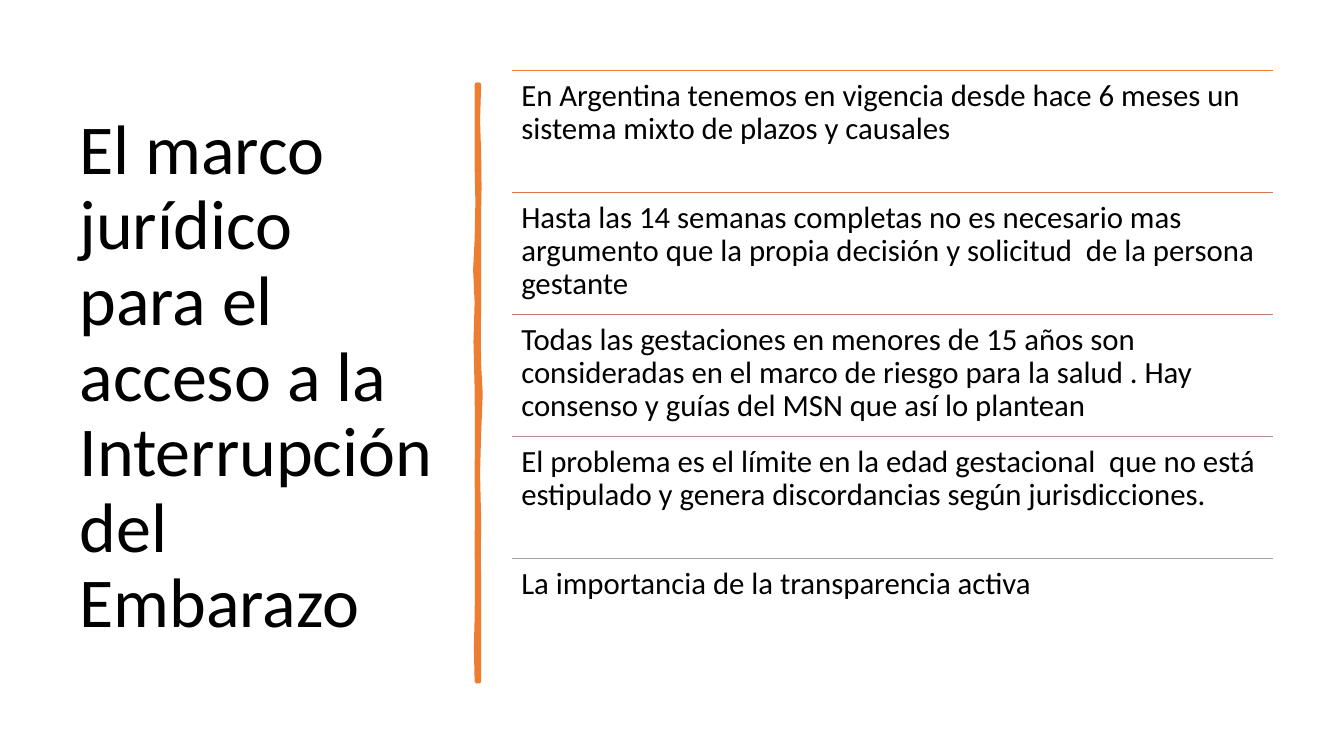
"""Build the slide on the legal framework with its divider and five ruled points."""
from dataclasses import dataclass

from lxml import etree
from pptx import Presentation, util as u
from pptx.dml.color import RGBColor
from pptx.enum import shapes as sh, text as tx
from pptx.oxml import ns

FONT = "Calibri"
BLACK = "000000"
ORANGE = "ED7D31"
LEFT, TOP, WIDTH, STEP = 5.08, 0.7, 7.55, 1.21

Spot = tuple[float, float]
Curve = tuple[float, float, float, float, float, float]


@dataclass
class Point:
    text: str
    color: str


POINTS = [
    Point("En Argentina tenemos en vigencia desde hace 6 meses un sistema mixto "
          "de plazos y causales", ORANGE),
    Point("Hasta las 14 semanas completas no es necesario mas argumento que la "
          "propia decisión y solicitud  de la persona gestante", "D77850"),
    Point("Todas las gestaciones en menores de 15 años son consideradas en el "
          "marco de riesgo para la salud . Hay consenso y guías del MSN que así "
          "lo plantean", "C47F6E"),
    Point("El problema es el límite en la edad gestacional  que no está "
          "estipulado y genera discordancias según jurisdicciones.", "B38E8A"),
    Point("La importancia de la transparencia activa", "A4A4A4"),
]

START: Spot = (4.75, 0.84)
CURVES: list[Curve] = [
    (4.75, 1.15, 4.72, 1.25, 4.75, 1.52),
    (4.77, 1.79, 4.74, 1.97, 4.75, 2.08),
    (4.76, 2.2, 4.74, 2.55, 4.75, 2.94),
    (4.76, 3.33, 4.73, 3.43, 4.75, 3.62),
    (4.77, 3.81, 4.77, 3.97, 4.75, 4.3),
    (4.72, 4.63, 4.75, 4.74, 4.75, 5.16),
    (4.75, 5.57, 4.74, 5.53, 4.75, 5.78),
    (4.76, 6.03, 4.74, 6.47, 4.75, 6.76),
    (4.74, 6.75, 4.73, 6.75, 4.73, 6.76),
    (4.7, 6.49, 4.74, 6.32, 4.73, 6.13),
    (4.72, 5.95, 4.75, 5.69, 4.73, 5.39),
    (4.71, 5.1, 4.76, 5, 4.73, 4.71),
    (4.7, 4.42, 4.77, 4.2, 4.73, 3.86),
    (4.69, 3.51, 4.74, 3.25, 4.73, 3),
    (4.71, 2.75, 4.71, 2.59, 4.73, 2.38),
    (4.74, 2.16, 4.74, 1.85, 4.73, 1.64),
    (4.71, 1.43, 4.75, 1.21, 4.73, 0.84),
]


def paint(color: str) -> RGBColor:
    return RGBColor.from_string(color)


def write(tree, text: str, *, at: tuple[float, float, float, float], size: float,
          pad: Spot, anchor=tx.MSO_ANCHOR.TOP, color: str = BLACK) -> None:
    frame = tree.add_textbox(*map(u.Inches, at)).text_frame
    frame.word_wrap = True
    frame.vertical_anchor = anchor
    frame.margin_left = frame.margin_right = u.Inches(pad[0])
    frame.margin_top = frame.margin_bottom = u.Inches(pad[1])
    para = frame.paragraphs[0]
    para.line_spacing = 0.9
    run = para.add_run()
    run.text = text
    run.font.name = FONT
    run.font.size = u.Pt(size)
    run.font.color.rgb = paint(color)


def rule(tree, top: float, color: str) -> None:
    line = tree.add_connector(
        sh.MSO_CONNECTOR.STRAIGHT, u.Inches(LEFT), u.Inches(top),
        u.Inches(LEFT + WIDTH), u.Inches(top))
    line.line.color.rgb = paint(color)
    line.line.width = u.Pt(1)
    etree.SubElement(line._element.spPr, ns.qn("a:effectLst"))


def trace(start: Spot, curves: list[Curve]) -> list[Spot]:
    spots = [start]
    for ax, ay, bx, by, cx, cy in curves:
        x, y = spots[-1]
        spots.append(((x + 3 * ax + 3 * bx + cx) / 8, (y + 3 * ay + 3 * by + cy) / 8))
        spots.append((cx, cy))
    return spots


def divide(tree) -> None:
    spots = [(u.Inches(x), u.Inches(y)) for x, y in trace(START, CURVES)]
    build = tree.build_freeform(*spots[0])
    build.add_line_segments(spots[1:], close=True)
    shape = build.convert_to_shape()
    shape.shadow.inherit = False
    shape.fill.solid()
    shape.fill.fore_color.rgb = paint(ORANGE)
    shape.line.color.rgb = paint(ORANGE)
    shape.line.width = u.Pt(3.25)


def main() -> None:
    deck = Presentation()
    deck.slide_width, deck.slide_height = u.Inches(13.33), u.Inches(7.5)
    slide = deck.slides.add_slide(deck.slide_layouts[6])
    write(slide.shapes,
          "El marco jurídico  para el acceso a la Interrupción del Embarazo",
          at=(0.69, 0.7, 3.74, 6.11), size=50, pad=(0.1, 0.05),
          anchor=tx.MSO_ANCHOR.MIDDLE)
    divide(slide.shapes)
    group = slide.shapes.add_group_shape().shapes
    for i, point in enumerate(POINTS):
        top = TOP + i * STEP
        rule(group, top, point.color)
        write(group, point.text, at=(LEFT, top, WIDTH, STEP), size=22,
              pad=(0.09, 0.09))
    deck.save("out.pptx")


if __name__ == "__main__":
    main()
